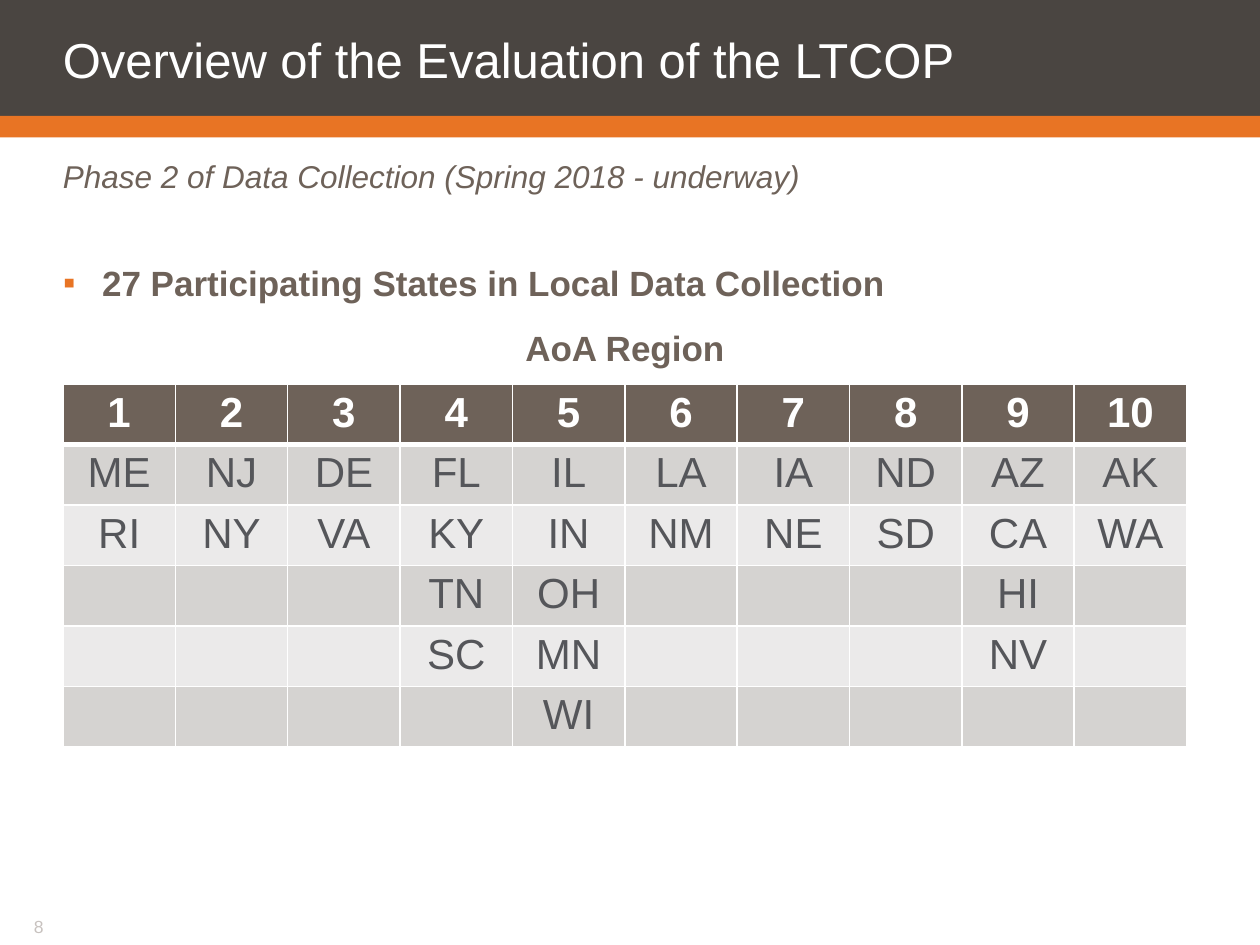
from lxml import etree
from pptx import Presentation
from pptx import util as u
from pptx.dml.color import RGBColor
from pptx.enum import shapes, text
from pptx.oxml.ns import qn

WHITE = RGBColor(0xFF, 0xFF, 0xFF)
CHARCOAL = RGBColor(0x4A, 0x45, 0x41)
ORANGE = RGBColor(0xE8, 0x74, 0x24)
BROWN = RGBColor(0x6E, 0x62, 0x59)
SLATE = RGBColor(0x55, 0x56, 0x5A)
PALE = RGBColor(0xC8, 0xC2, 0xBF)
BAND_DARK = RGBColor(0xD5, 0xD3, 0xD1)
BAND_LIGHT = RGBColor(0xEB, 0xEA, 0xEA)

REGIONS = [
    ["ME", "RI"],
    ["NJ", "NY"],
    ["DE", "VA"],
    ["FL", "KY", "TN", "SC"],
    ["IL", "IN", "OH", "MN", "WI"],
    ["LA", "NM"],
    ["IA", "NE"],
    ["ND", "SD"],
    ["AZ", "CA", "HI", "NV"],
    ["AK", "WA"],
]


class SlideBuilder:
    font = "Arial"

    def __init__(self, page):
        self.page = page

    def bar(self, top, height, color):
        bar = self.page.shapes.add_shape(
            shapes.MSO_SHAPE.RECTANGLE, 0, u.Inches(top), u.Inches(10), u.Inches(height))
        bar.shadow.inherit = False
        bar.fill.solid()
        bar.fill.fore_color.rgb = color
        bar.line.fill.background()

    def box(self, left, top, width, height, insets, wrap=True,
            anchor=text.MSO_ANCHOR.TOP):
        box = self.page.shapes.add_textbox(*map(u.Inches, (left, top, width, height)))
        frame = box.text_frame
        frame.word_wrap = wrap
        frame.vertical_anchor = anchor
        (frame.margin_left, frame.margin_top,
         frame.margin_right, frame.margin_bottom) = map(u.Inches, insets)
        return frame

    def span(self, para, words, size, color, bold=False, italic=False):
        span = para.add_run()
        span.text = words
        span.font.name = self.font
        span.font.size = u.Pt(size)
        span.font.color.rgb = color
        span.font.bold = bold
        span.font.italic = italic

    def bullet(self, para, mark, color, indent):
        props = para._p.get_or_add_pPr()
        props.set("marL", str(u.Inches(indent)))
        props.set("indent", str(-u.Inches(indent)))
        tint = etree.SubElement(props, qn("a:buClr"))
        etree.SubElement(tint, qn("a:srgbClr"), val=str(color))
        etree.SubElement(props, qn("a:buFont"), typeface=self.font)
        etree.SubElement(props, qn("a:buChar"), char=mark)

    def borders(self, cell, **widths):
        props = cell._tc.get_or_add_tcPr()
        for position, (side, width) in enumerate(widths.items()):
            line = etree.Element(qn("a:ln" + side), w=str(u.Pt(width)))
            fill = etree.SubElement(line, qn("a:solidFill"))
            etree.SubElement(fill, qn("a:srgbClr"), val=str(WHITE))
            props.insert(position, line)

    def table(self, left, top, width, row_height, columns):
        row_count = max(map(len, columns))
        grid = self.page.shapes.add_table(
            row_count, len(columns), u.Inches(left), u.Inches(top),
            u.Inches(width), u.Inches(row_height * row_count)).table
        for row in grid.rows:
            row.height = u.Inches(row_height)
        for c, entries in enumerate(columns):
            for r in range(row_count):
                cell = grid.cell(r, c)
                header = r == 0
                cell.margin_top = cell.margin_bottom = u.Inches(0.04)
                cell.fill.solid()
                cell.fill.fore_color.rgb = (
                    BROWN if header else BAND_DARK if r % 2 else BAND_LIGHT)
                self.borders(cell, L=1, R=1, T=3 if r == 1 else 1, B=3 if header else 1)
                para = cell.text_frame.paragraphs[0]
                para.alignment = text.PP_ALIGN.CENTER
                if r < len(entries):
                    self.span(para, entries[r], 24, WHITE if header else SLATE, bold=header)
                else:
                    para.font.size = u.Pt(24)


def main():
    deck = Presentation()
    deck.slide_width, deck.slide_height = u.Inches(10), u.Inches(7.5)
    slide = SlideBuilder(deck.slides.add_slide(deck.slide_layouts[6]))

    # Header bars and page number
    slide.bar(0, 0.92, CHARCOAL)
    number = slide.box(0.17, 7.27, 1.92, 0.18, (0.1, 0, 0.1, 0.05), wrap=False)
    slide.span(number.paragraphs[0], "8", 10, PALE)
    slide.bar(0.92, 0.17, ORANGE)

    # Title
    title = slide.box(0, 0, 10, 0.92, (0.5, 0.1, 0.1, 0), anchor=text.MSO_ANCHOR.MIDDLE)
    title.paragraphs[0].line_spacing = u.Pt(28)
    slide.span(title.paragraphs[0], "Overview of the Evaluation of the LTCOP", 28, WHITE)

    # Body
    body = slide.box(0.5, 2.03, 8.92, 1, (0, 0.05, 0, 0.05))
    para = body.paragraphs[0]
    slide.bullet(para, "▪", ORANGE, 0.31)
    slide.span(para, "27 Participating States in Local Data Collection", 20, BROWN, bold=True)
    para = body.add_paragraph()
    para.alignment = text.PP_ALIGN.CENTER
    para.space_before = u.Pt(13)
    slide.span(para, "AoA Region", 20, BROWN, bold=True)

    # Subtitle
    subtitle = slide.box(0, 1.22, 10, 0.33, (0.5, 0.03, 0, 0))
    slide.span(subtitle.paragraphs[0],
               "Phase 2 of Data Collection (Spring 2018 - underway)", 18, BROWN, italic=True)

    # States by region
    columns = [[str(n)] + states for n, states in enumerate(REGIONS, 1)]
    slide.table(0.5, 3.05, 8.92, 0.47, columns)

    deck.save("out.pptx")


if __name__ == "__main__":
    main()
